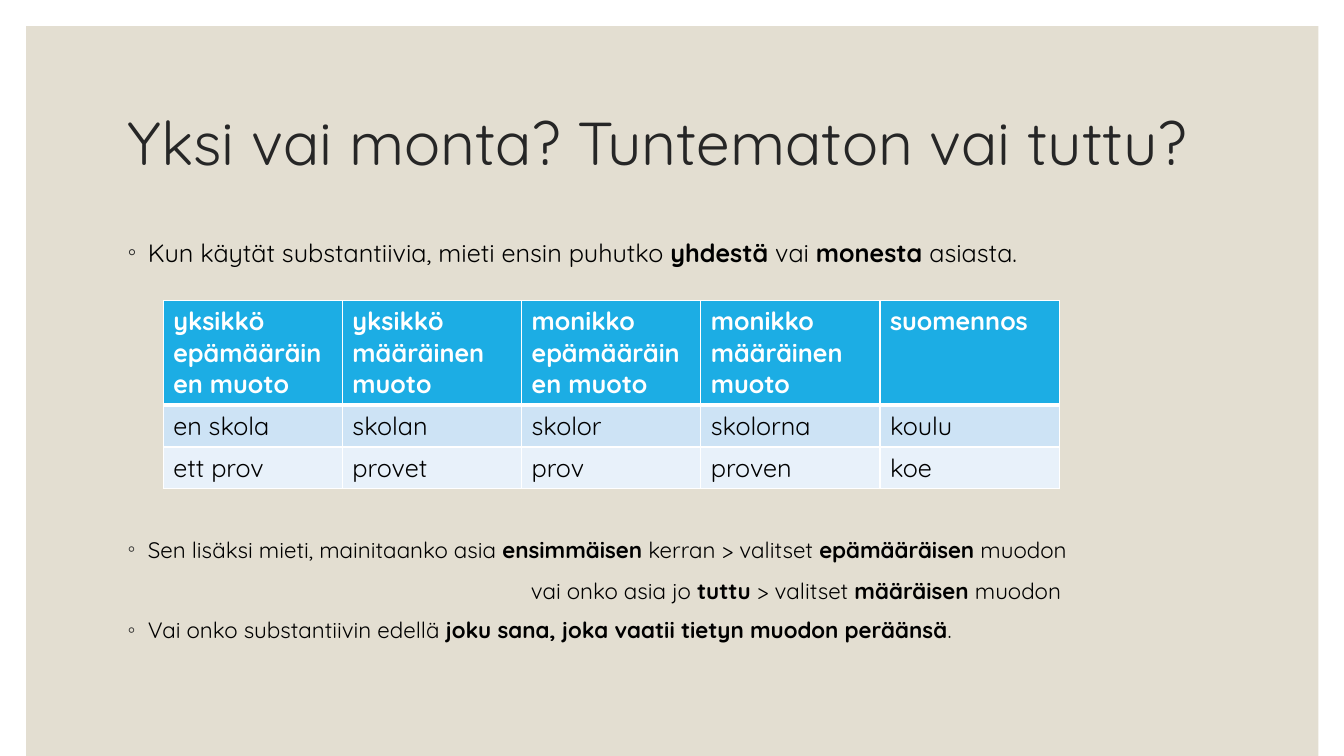
from dataclasses import dataclass

from lxml import etree
from pptx import Presentation
from pptx import util as u
from pptx.dml.color import RGBColor
from pptx.enum import shapes, text
from pptx.oxml.ns import qn

FACE = "Quicksand"
SAND = RGBColor(0xE3, 0xDE, 0xD1)
INK = RGBColor(0x26, 0x26, 0x26)
BLACK = RGBColor(0, 0, 0)
WHITE = RGBColor(0xFF, 0xFF, 0xFF)
BLUE = RGBColor(0x1C, 0xAD, 0xE4)
SKY = RGBColor(0xCD, 0xE3, 0xF5)
PALE = RGBColor(0xE8, 0xF1, 0xFA)


@dataclass
class Point:
    words: str
    size: float
    gap: float
    left: float = 14.4
    dot: bool = True


@dataclass
class Row:
    cells: list[str]
    high: float
    fill: RGBColor
    ink: RGBColor = BLACK
    bold: bool = False
    rule: float = 1


POINTS = [
    Point("Kun käytät substantiivia, mieti ensin puhutko *yhdestä* vai *monesta* asiasta.", 18, 0),
    Point("Sen lisäksi mieti, mainitaanko asia *ensimmäisen* kerran > valitset *epämääräisen* muodon", 16, 192),
    Point("vai onko asia jo *tuttu* > valitset *määräisen* muodon", 16, 10, 288, False),
    Point("Vai onko substantiivin edellä *joku sana, joka vaatii tietyn muodon peräänsä*.", 16, 9),
]

ROWS = [
    Row(["yksikkö\nepämääräinen muoto", "yksikkö\nmääräinen muoto", "monikko\nepämääräinen muoto",
         "monikko määräinen muoto", "suomennos"], 74.7, BLUE, WHITE, True, 3),
    Row(["en skola", "skolan", "skolor", "skolorna", "koulu"], 29.7, SKY),
    Row(["ett prov", "provet", "prov", "proven", "koe"], 29.7, PALE),
]


def place(shape, left: float, top: float, width: float, height: float) -> None:
    shape.left, shape.top = u.Pt(left), u.Pt(top)
    shape.width, shape.height = u.Pt(width), u.Pt(height)


def style(font, size: float, ink: RGBColor) -> None:
    font.name = FACE
    font.size = u.Pt(size)
    font.color.rgb = ink


def add_back(slide) -> None:
    back = slide.shapes.add_shape(shapes.MSO_SHAPE.RECTANGLE, u.Pt(18.7), u.Pt(18.7), u.Pt(923), u.Pt(521.5))
    back.shadow.inherit = False
    back.fill.solid()
    back.fill.fore_color.rgb = SAND
    back.line.fill.background()
    slide.shapes._spTree.insert(2, back._element)


def fill_title(title) -> None:
    place(title, 84, 50.4, 792, 108)
    frame = title.text_frame
    frame.text = "Yksi vai monta? Tuntematon vai tuttu?"
    frame.auto_size = text.MSO_AUTO_SIZE.NONE
    frame.vertical_anchor = text.MSO_ANCHOR.MIDDLE
    para = frame.paragraphs[0]
    para.alignment = text.PP_ALIGN.LEFT
    para.line_spacing = 0.9
    style(para.font, 43.2, INK)


def set_dot(para, point: Point) -> None:
    props = para._p.get_or_add_pPr()
    props.set("marL", str(u.Pt(point.left)))
    props.set("indent", str(u.Pt(-point.left if point.dot else 0)))
    marks = []
    if point.dot:
        tint = etree.Element(qn("a:buClr"))
        etree.SubElement(tint, qn("a:srgbClr"), val=str(INK))
        marks = [tint, etree.Element(qn("a:buChar"), char="◦")]
    else:
        marks = [etree.Element(qn("a:buNone"))]
    spot = props.index(props.find(qn("a:defRPr")))
    props[spot:spot] = marks


def fill_body(body) -> None:
    place(body, 84, 165.6, 792, 309.6)
    frame = body.text_frame
    frame.auto_size = text.MSO_AUTO_SIZE.NONE
    for order, point in enumerate(POINTS):
        para = frame.add_paragraph() if order else frame.paragraphs[0]
        para.space_before = u.Pt(point.gap)
        style(para.font, point.size, BLACK)
        set_dot(para, point)
        for part, words in enumerate(point.words.split("*")):
            run = para.add_run()
            run.text = words
            if part % 2:
                run.font.bold = True


def add_edge(cell, side: str, width: float) -> None:
    props = cell._tc.get_or_add_tcPr()
    line = etree.SubElement(props, qn(f"a:ln{side}"), w=str(u.Pt(width)))
    solid = etree.SubElement(line, qn("a:solidFill"))
    etree.SubElement(solid, qn("a:srgbClr"), val=str(WHITE))


def fill_cell(cell, words: str, row: Row, above: float) -> None:
    for side, width in {"L": 1, "R": 1, "T": above, "B": row.rule}.items():
        add_edge(cell, side, width)
    cell.fill.solid()
    cell.fill.fore_color.rgb = row.fill
    cell.text = words
    for para in cell.text_frame.paragraphs:
        style(para.font, 18, row.ink)
        para.font.bold = row.bold


def add_forms(slide) -> None:
    count = len(ROWS[0].cells)
    high = sum(row.high for row in ROWS)
    table = slide.shapes.add_table(
        len(ROWS), count, u.Pt(116.6), u.Pt(214.6), u.Pt(128 * count), u.Pt(high)).table
    above = 1
    for line, row in enumerate(ROWS):
        table.rows[line].height = u.Pt(row.high)
        for col, words in enumerate(row.cells):
            fill_cell(table.cell(line, col), words, row, above)
        above = row.rule


def main() -> None:
    deck = Presentation()
    deck.slide_width, deck.slide_height = u.Pt(960), u.Pt(540)
    slide = deck.slides.add_slide(deck.slide_layouts[1])
    add_back(slide)
    fill_title(slide.shapes.title)
    fill_body(slide.placeholders[1])
    add_forms(slide)
    deck.save("out.pptx")


if __name__ == "__main__":
    main()
